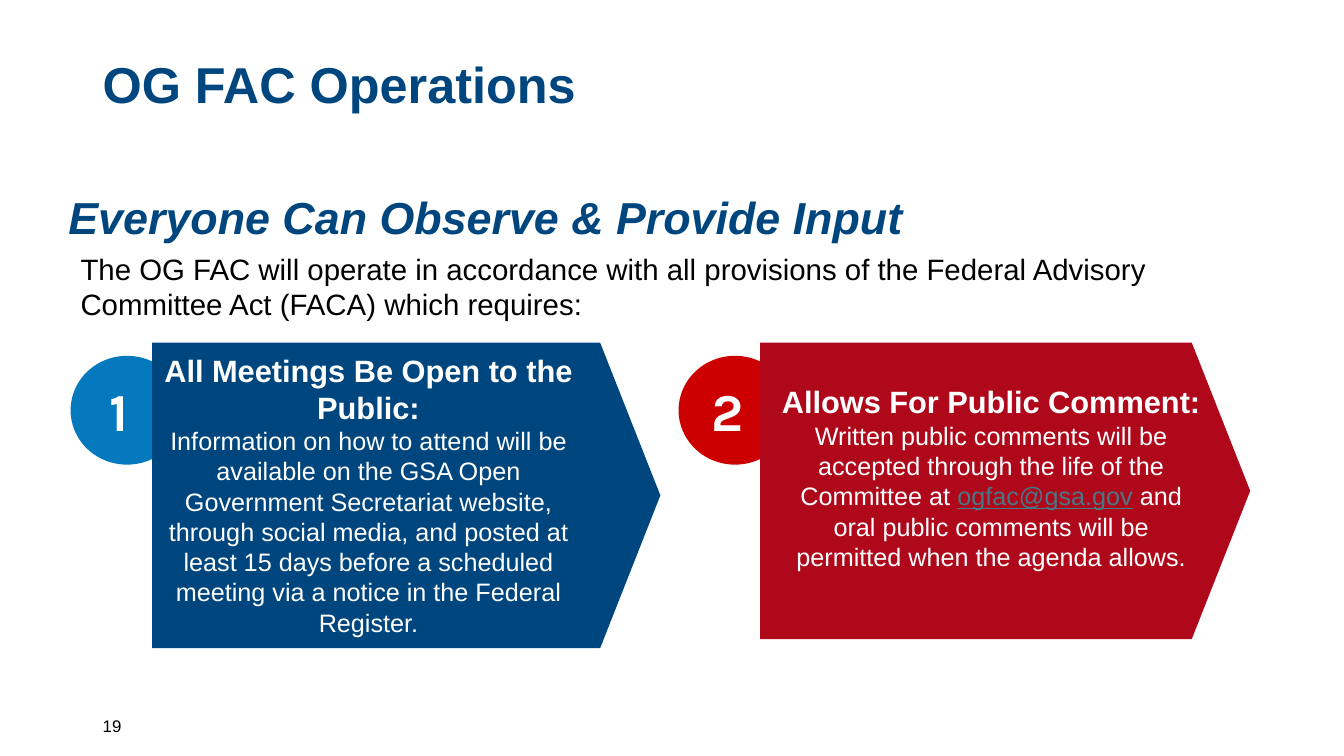
from pptx import Presentation
from pptx.dml.color import RGBColor
from pptx.enum.shapes import MSO_SHAPE as Shape
from pptx.enum.text import MSO_ANCHOR as Anchor, PP_ALIGN as Align
from pptx.util import Inches, Pt

NAVY = RGBColor(0x00, 0x46, 0x7E)
BLUE = RGBColor(0x05, 0x79, 0xBD)
RED = RGBColor(0xCC, 0x00, 0x00)
CRIMSON = RGBColor(0xAF, 0x08, 0x1B)
TEAL = RGBColor(0x46, 0x78, 0x86)
WHITE = RGBColor(0xFF, 0xFF, 0xFF)
BLACK = RGBColor(0x00, 0x00, 0x00)

deck = Presentation()
deck.slide_width, deck.slide_height = Inches(13.33), Inches(7.5)
page = deck.slides.add_slide(deck.slide_layouts[6])


def add_text(area, paragraphs, inset=(0, 0), anchor=Anchor.MIDDLE,
             align=Align.LEFT, spacing=None, font="Arial", italic=False):
    """Each paragraph is a list of (text, size, colour, bold, underline) spans."""
    box = page.shapes.add_textbox(*map(Inches, area))
    frame = box.text_frame
    frame.word_wrap = True
    frame.vertical_anchor = anchor
    frame.margin_left = frame.margin_right = Inches(inset[0])
    frame.margin_top = frame.margin_bottom = Inches(inset[1])
    for index, spans in enumerate(paragraphs):
        para = frame.add_paragraph() if index else frame.paragraphs[0]
        para.alignment = align
        para.line_spacing = spacing
        for text, size, color, bold, underline in spans:
            span = para.add_run()
            span.text = text
            span.font.name = font
            span.font.size = Pt(size)
            span.font.color.rgb = color
            span.font.bold = bold
            span.font.italic = italic
            span.font.underline = underline


def add_filled(kind, area, color):
    shape = page.shapes.add_shape(kind, *map(Inches, area))
    shape.shadow.inherit = False
    shape.fill.solid()
    shape.fill.fore_color.rgb = color
    shape.line.fill.background()
    return shape


add_text((0.92, 0.34, 11.5, 1.05),
         [[("OG FAC Operations", 36, NAVY, True, False)]],
         inset=(0.1, 0.05), spacing=0.9)
add_text((0.58, 1.7, 11.71, 0.57),
         [[("Everyone Can Observe & Provide Input", 32, NAVY, True, False)]],
         inset=(0.1, 0.1), anchor=Anchor.TOP, spacing=1.15, italic=True)
add_text((0.7, 2.44, 11.05, 1.15),
         [[("The OG FAC will operate in accordance with all provisions of the "
            "Federal Advisory Committee Act (FACA) which requires:",
            21, BLACK, False, False)]],
         inset=(0.1, 0.05), anchor=Anchor.TOP)

# number, left edge, circle colour, arrow colour, arrow size, text area, heading, body
requirements = [
    ("1", 0.7, BLUE, NAVY, (5.04, 3.03), (1.52, 3.78, 4.27, 2.25),
     "All Meetings Be Open to the Public:",
     [("Information on how to attend will be available on the GSA Open "
       "Government Secretariat website, through social media, and posted at "
       "least 15 days before a scheduled meeting via a notice in the Federal "
       "Register.", 18, WHITE, False, False)]),
    ("2", 6.73, RED, CRIMSON, (4.86, 2.94), (7.74, 3.61, 4.18, 2.25),
     "Allows For Public Comment:",
     [("Written public comments will be accepted through the life of the "
       "Committee at ", 18, WHITE, False, False),
      ("ogfac@gsa.gov", 18, TEAL, False, True),
      (" and oral public comments will be permitted when the agenda allows.",
       18, WHITE, False, False)]),
]
for number, left, light, dark, size, text_area, heading, body in requirements:
    add_filled(Shape.OVAL, (left, 3.53, 1.12, 1.08), light)
    add_text((left + 0.15, 3.7, 0.67, 0.74), [[(number, 38, WHITE, True, False)]],
             align=Align.CENTER, font="Karla")
    arrow = add_filled(Shape.PENTAGON, (left + 0.81, 3.4, *size), dark)
    arrow.adjustments[0] = 0.197
    add_text(text_area, [[(heading, 22, WHITE, True, False)], body], align=Align.CENTER)

add_text((0.92, 7, 0.65, 0.4), [[("19", 12, BLACK, False, False)]], inset=(0.1, 0.05))

deck.save("out.pptx")
